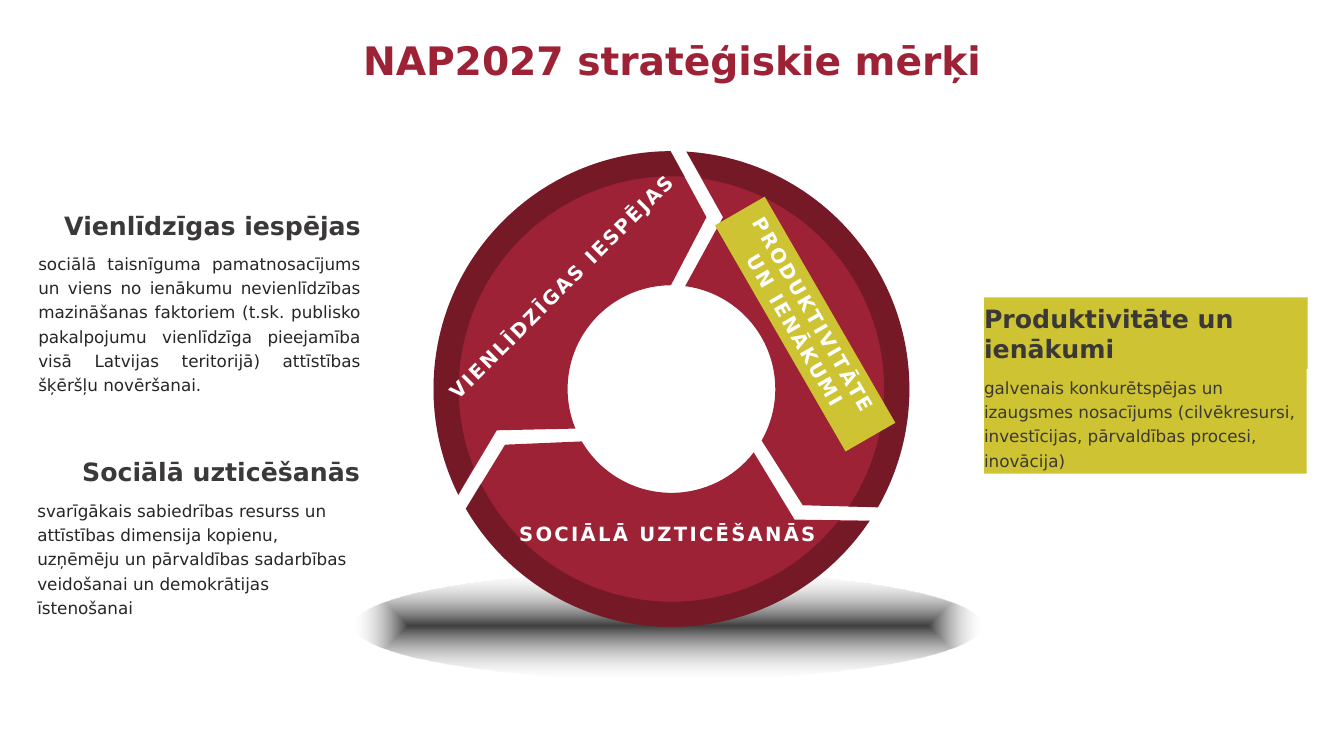
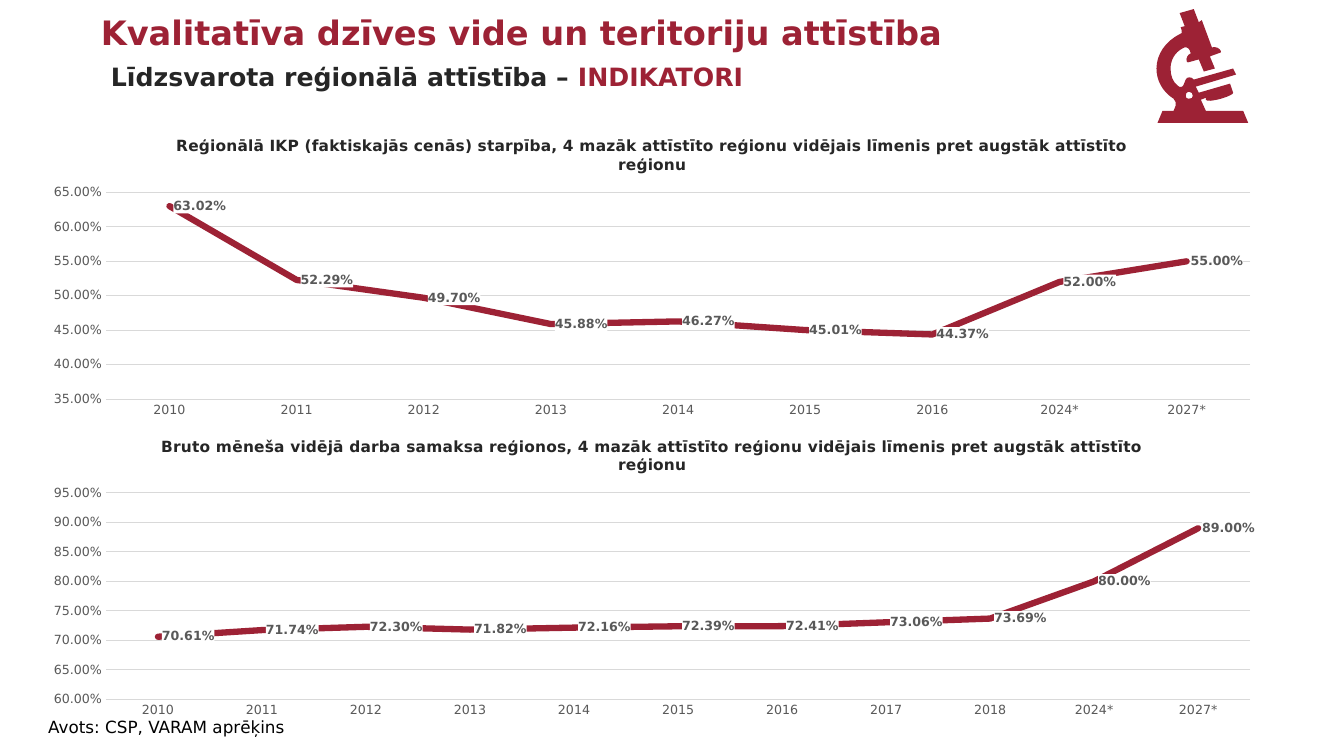
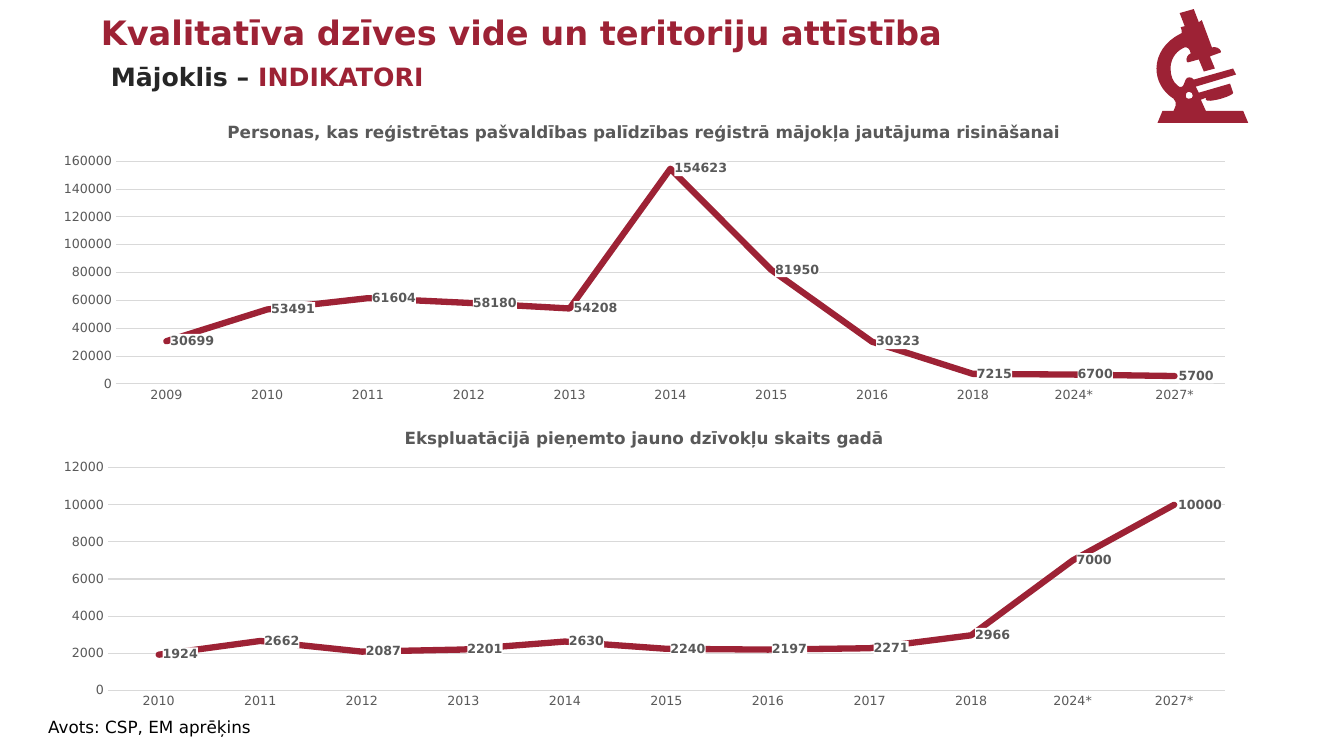
from math import ceil, cos, floor, radians, sin, tan

from lxml.etree import SubElement
from pptx import Presentation
from pptx.chart.data import CategoryChartData
from pptx.dml.color import RGBColor
from pptx.enum.chart import XL_CHART_TYPE as CT, XL_LABEL_POSITION as LP
from pptx.enum.chart import XL_MARKER_STYLE as MS, XL_TICK_MARK as TM
from pptx.enum.shapes import MSO_SHAPE as SHAPE
from pptx.enum.text import MSO_ANCHOR as ANCHOR, MSO_AUTO_SIZE as FIT, PP_ALIGN as AL
from pptx.oxml import parse_xml
from pptx.oxml.ns import nsdecls, qn
from pptx.util import Inches, Pt

FONT = "DejaVu Sans"
RED = RGBColor(0x9D, 0x22, 0x35)
LIME = RGBColor(0xCE, 0xC3, 0x32)
DARK = RGBColor(0x3B, 0x38, 0x38)
INK = RGBColor(0x26, 0x26, 0x26)
GREY = RGBColor(0x59, 0x59, 0x59)
GRID = RGBColor(0xD9, 0xD9, 0xD9)
WHITE = RGBColor(0xFF, 0xFF, 0xFF)
BLACK = RGBColor(0, 0, 0)

# ---- Content: goals slide
GOALS_TITLE = "NAP2027 stratēģiskie mērķi"
# heading, heading box, heading align, body, body box, body align, colour, fill
GOALS = [
    ("Produktivitāte un ienākumi", (9.76, 2.95, 3.21, 0.71), AL.LEFT,
     "galvenais konkurētspējas un izaugsmes nosacījums (cilvēkresursi, investīcijas, "
     "pārvaldības procesi, inovācija)", (9.76, 3.66, 3.2, 1.04), AL.LEFT, DARK, LIME),
    ("Sociālā uzticēšanās", (0.36, 4.48, 3.21, 0.4), AL.RIGHT,
     "svarīgākais sabiedrības resurss un attīstības dimensija kopienu, uzņēmēju un "
     "pārvaldības sadarbības veidošanai un demokrātijas īstenošanai",
     (0.37, 4.88, 3.2, 1.29), AL.LEFT, INK, None),
    ("Vienlīdzīgas iespējas", (0.37, 2.04, 3.21, 0.4), AL.RIGHT,
     "sociālā taisnīguma pamatnosacījums un viens no ienākumu nevienlīdzības mazināšanas "
     "faktoriem (t.sk. publisko pakalpojumu vienlīdzīga pieejamība visā Latvijas "
     "teritorijā) attīstības šķēršļu novēršanai.",
     (0.38, 2.43, 3.2, 1.53), AL.JUSTIFY, INK, None),
]
# lines, box, rotation, fill
RING_LABELS = [
    (["VIENLĪDZĪGAS IESPĒJAS"], (3.84, 2.68, 3.45, 0.34), 315, None),
    (["SOCIĀLĀ UZTICĒŠANĀS"], (5, 5.13, 3.24, 0.34), 0, None),
    (["PRODUKTIVITĀTE ", "UN IENĀKUMI"], (6.69, 2.93, 2.59, 0.57), 60, LIME),
]

# ---- Content: indicator slides
INDICATOR_TITLE = "Kvalitatīva dzīves vide un teritoriju attīstība"
TO_2018 = [str(y) for y in range(2010, 2019)] + ["2024*", "2027*"]
INDICATORS = [
    dict(topic="Līdzsvarota reģionālā attīstība", topic_width=6.68,
         source="Avots: CSP, VARAM aprēķins", source_width=2.86,
         title_size=11, title_color=INK, charts=[
        dict(title="Reģionālā IKP (faktiskajās cenās) starpība, 4 mazāk attīstīto reģionu "
                   "vidējais līmenis pret augstāk attīstīto reģionu",
             box=(0.29, 1.2, 12.36, 3), plot=(1.05, 1.91, 12.4, 3.96),
             cats=TO_2018[:7] + TO_2018[-2:], limits=(0.35, None), fmt="0.00%",
             vals=[0.6302, 0.5229, 0.497, 0.4588, 0.4627, 0.4501, 0.4437, 0.52, 0.55]),
        dict(title="Bruto mēneša vidējā darba samaksa reģionos, 4 mazāk attīstīto reģionu "
                   "vidējais līmenis pret augstāk attīstīto reģionu",
             box=(0.29, 4.18, 12.36, 3), plot=(1.05, 4.89, 12.4, 6.94),
             cats=TO_2018, limits=(0.6, None), fmt="0.00%",
             vals=[0.7061, 0.7174, 0.723, 0.7182, 0.7216, 0.7239, 0.7241, 0.7306,
                   0.7369, 0.8, 0.89])]),
    dict(topic="Mājoklis", topic_width=3.52,
         source="Avots: CSP, EM aprēķins", source_width=2.49,
         title_size=12, title_color=GREY, charts=[
        dict(title="Personas, kas reģistrētas pašvaldības palīdzības reģistrā mājokļa "
                   "jautājuma risināšanai",
             box=(0.39, 1.05, 12, 3), plot=(1.15, 1.6, 12.15, 3.81),
             cats=["2009"] + TO_2018[:7] + TO_2018[-3:], limits=(None, 160000),
             fmt="General",
             vals=[30699, 53491, 61604, 58180, 54208, 154623, 81950, 30323, 7215,
                   6700, 5700]),
        dict(title="Ekspluatācijā pieņemto jauno dzīvokļu skaits gadā",
             box=(0.39, 4.09, 12, 3), plot=(1.07, 4.64, 12.15, 6.85),
             cats=TO_2018, limits=(None, None), fmt="0",
             vals=[1924, 2662, 2087, 2201, 2630, 2240, 2197, 2271, 2966, 7000, 10000])]),
]

# Microscope outline: pairs are corners, sextuples are Bezier curves
MICROSCOPE = [
    [(11.84, .09), (11.7, .13), (11.75, .26), (11.71, .27), (11.72, .3),
     (11.73, .32, 11.72, .34, 11.7, .34), (11.56, .41, 11.47, .54, 11.47, .68),
     (11.47, .8, 11.53, .91, 11.64, .98), (11.66, 1, 11.67, 1.03, 11.66, 1.05),
     (11.64, 1.1), (11.53, 1.1), (11.48, 1.22), (12.38, 1.22), (12.33, 1.1), (11.96, 1.1),
     (11.91, .99), (11.96, .97), (11.96, .99), (11.97, 1.01, 12.03, 1, 12.11, .98),
     (12.18, .96, 12.24, .93, 12.23, .92), (12.2, .83), (11.89, .92), (11.86, .86),
     (12.26, .74), (12.23, .68), (11.84, .79), (11.82, .76, 11.77, .76, 11.76, .79),
     (11.74, .84), (11.73, .87, 11.7, .87, 11.68, .85),
     (11.63, .81, 11.61, .75, 11.61, .68), (11.61, .6, 11.65, .52, 11.73, .48),
     (11.75, .46, 11.79, .47, 11.8, .5), (11.81, .53),
     (11.78, .54, 11.76, .58, 11.77, .61), (11.78, .62), (11.89, .59), (11.94, .71),
     (12.05, .68), (12, .56), (12.11, .52), (12.11, .51),
     (12.1, .48, 12.06, .46, 12.02, .47), (11.92, .2), (11.89, .22)],
    [(11.79, .91), (11.82, .91, 11.83, .93, 11.83, .95), (11.83, .97, 11.82, .98, 11.79, .98),
     (11.77, .98, 11.76, .97, 11.76, .95), (11.76, .93, 11.77, .91, 11.79, .91)],
]


# ---- Shared helpers
def inches(values):
    return [Inches(v) for v in values]


def set_font(font, size, color, bold=False):
    font.name, font.size, font.bold = FONT, Pt(size), bold
    font.color.rgb = color


def add_run(p, text, size, color, bold=False, spacing=None, highlight=None):
    r = p.add_run()
    r.text = text
    set_font(r.font, size, color, bold)
    rPr = r._r.get_or_add_rPr()
    if spacing:
        rPr.set("spc", str(spacing))
    if highlight is not None:
        rPr.find(qn("a:solidFill")).addnext(parse_xml(
            f'<a:highlight {nsdecls("a")}><a:srgbClr val="{highlight}"/></a:highlight>'))


def paint(sp, color):
    sp.shadow.inherit = False
    sp.fill.solid()
    sp.fill.fore_color.rgb = color
    sp.line.fill.background()


def add_box(s, box, fill=None, side=0.1, anchor=ANCHOR.TOP, wrap=True):
    if fill is None:
        sp = s.shapes.add_textbox(*inches(box))
    else:
        sp = s.shapes.add_shape(SHAPE.RECTANGLE, *inches(box))
        paint(sp, fill)
    tf = sp.text_frame
    tf.word_wrap, tf.auto_size, tf.vertical_anchor = wrap, FIT.SHAPE_TO_FIT_TEXT, anchor
    tf.margin_left = tf.margin_right = Inches(side)
    tf.paragraphs[0].alignment = AL.LEFT
    return sp


def add_slide(prs, title, box, size, align, side=0.1, wrap=True):
    s = prs.slides.add_slide(prs.slide_layouts[5])
    sp = s.shapes.title
    sp.left, sp.top, sp.width, sp.height = inches(box)
    tf = sp.text_frame
    tf.word_wrap, tf.auto_size, tf.vertical_anchor = wrap, FIT.NONE, ANCHOR.TOP
    tf.margin_left = tf.margin_right = Inches(side)
    p = tf.paragraphs[0]
    p.alignment = align
    add_run(p, title, size, RED, True)
    return s


def add_outline(s, contours, color):
    fb, segments = None, []
    for start, *rest in contours:
        if fb is None:
            fb = s.shapes.build_freeform(*inches(start), scale=1.0)
        else:
            fb.move_to(*inches(start))
        points = [inches(seg[i:i + 2]) for seg in rest for i in range(0, len(seg), 2)]
        fb.add_line_segments(points, close=True)
        segments += rest
    sp = fb.convert_to_shape()
    paint(sp, color)
    # Merge the three points of each curve into one Bezier segment
    lines = iter(list(sp._element.iter(qn("a:lnTo"))))
    for seg in segments:
        parts = [next(lines) for _ in range(len(seg) // 2)]
        if len(parts) == 3:
            curve = parse_xml(f'<a:cubicBezTo {nsdecls("a")}/>')
            parts[0].addprevious(curve)
            for part in parts:
                curve.append(part[0])
                part.getparent().remove(part)
    return sp


# ---- Ring of three arrows
CENTRE = (6.66, 3.86)
R_OUT, R_BAND, R_IN = 2.36, 2.11, 1.03


def polar(radius, angle):
    a = radians(angle)
    return CENTRE[0] + radius * cos(a), CENTRE[1] + radius * sin(a)


def arc(radius, start, end):
    """Start point, then one Bezier per quadrant crossed."""
    low, high = sorted((start, end))
    stops = [90 * k for k in range(floor(low / 90) + 1, ceil(high / 90))]
    angles = sorted([low, *stops, high], reverse=start > end)
    path = [polar(radius, start)]
    for a, b in zip(angles, angles[1:]):
        k = 4 / 3 * tan(radians(b - a) / 4)
        (x0, y0), (x3, y3) = polar(radius, a), polar(radius, b)
        (cx, cy) = CENTRE
        path.append((x0 - k * (y0 - cy), y0 + k * (x0 - cx),
                     x3 + k * (y3 - cy), y3 - k * (x3 - cx), x3, y3))
    return path


def add_ring(s):
    turns = (0, 120, 240)
    for t in turns:
        add_outline(s, [arc(R_OUT, 153.6 + t, 269.8 + t) + [polar(1.74, 281.5 + t)]
                        + arc(R_IN, 269.7 + t, 157.6 + t) + [polar(1.78, 166.7 + t)]], RED)
    for t in turns:
        band = add_outline(s, [arc(R_OUT, 153.6 + t, 269.8 + t)
                               + arc(R_BAND, 273.7 + t, 158.5 + t)], BLACK)
        clr = band._element.spPr.find(qn("a:solidFill"))[0]
        SubElement(clr, qn("a:alpha")).set("val", "25000")


def add_floor_shadow(s):
    sp = s.shapes.add_shape(SHAPE.OVAL, *inches((3.52, 5.67, 6.21, 1.07)))
    paint(sp, BLACK)
    spPr = sp._element.spPr
    spPr.replace(spPr.find(qn("a:solidFill")), parse_xml(
        f'<a:gradFill {nsdecls("a")} rotWithShape="1"><a:gsLst>'
        '<a:gs pos="0"><a:srgbClr val="404040"/></a:gs>'
        '<a:gs pos="100000"><a:srgbClr val="E7E6E6"><a:alpha val="0"/></a:srgbClr></a:gs>'
        '</a:gsLst><a:path path="shape">'
        '<a:fillToRect l="50000" t="50000" r="50000" b="50000"/></a:path></a:gradFill>'))


def goals_slide(prs):
    s = add_slide(prs, GOALS_TITLE, (0, 0.36, 13.33, 0.81), 28, AL.CENTER)
    s.shapes.title.text_frame.paragraphs[0].line_spacing = 0.9
    add_floor_shadow(s)
    add_ring(s)
    for head, head_box, head_al, body, body_box, body_al, color, fill in GOALS:
        p = add_box(s, head_box, fill, 0, ANCHOR.BOTTOM).text_frame.paragraphs[0]
        p.alignment = head_al
        add_run(p, head, 18, DARK, True, highlight=fill)
        p = add_box(s, body_box, fill, 0).text_frame.paragraphs[0]
        p.alignment, p.line_spacing = body_al, 1.2
        add_run(p, body, 12, color, highlight=fill)
    for lines, box, rotation, fill in RING_LABELS:
        sp = add_box(s, box, fill, wrap=False)
        sp.rotation = rotation
        tf = sp.text_frame
        for i, line in enumerate(lines):
            p = tf.add_paragraph() if i else tf.paragraphs[0]
            p.alignment = AL.CENTER
            add_run(p, line, 14, WHITE, True, 160, fill)


# ---- Line charts
def place_plot(chart, box, plot):
    x, y, w, h = box
    left, top, right, bottom = plot
    parts = dict(x=(left - x) / w, y=(top - y) / h, w=(right - left) / w, h=(bottom - top) / h)
    area = chart._chartSpace.chart.plotArea
    for old in area.findall(qn("c:layout")):
        area.remove(old)
    modes = "".join(f'<c:{k}Mode val="edge"/>' for k in "xy")
    sizes = "".join(f'<c:{k} val="{v:.4f}"/>' for k, v in parts.items())
    area.insert(0, parse_xml(
        f'<c:layout {nsdecls("c")}><c:manualLayout><c:layoutTarget val="inner"/>'
        f'{modes}{sizes}</c:manualLayout></c:layout>'))


def add_line_chart(s, spec, title_size, title_color):
    data = CategoryChartData(number_format=spec["fmt"])
    data.categories = spec["cats"]
    data.add_series("Series 1", spec["vals"])
    chart = s.shapes.add_chart(CT.LINE, *inches(spec["box"]), data).chart
    set_font(chart.font, 9, GREY)
    chart.has_legend = False
    chart.has_title = True
    add_run(chart.chart_title.text_frame.paragraphs[0], spec["title"],
            title_size, title_color, True)
    chart.chart_title.include_in_layout = False
    place_plot(chart, spec["box"], spec["plot"])

    # Axes
    cat, val = chart.category_axis, chart.value_axis
    for axis in (cat, val):
        axis.major_tick_mark = axis.minor_tick_mark = TM.NONE
        set_font(axis.tick_labels.font, 9, GREY)
    val.minimum_scale, val.maximum_scale = spec["limits"]
    val.tick_labels.number_format = spec["fmt"]
    val.tick_labels.number_format_is_linked = False
    val.format.line.fill.background()
    for line in (cat.format.line, val.major_gridlines.format.line):
        line.color.rgb, line.width = GRID, Pt(0.75)

    # Series and value labels
    plot = chart.plots[0]
    plot.vary_by_categories = False
    ser = plot.series[0]
    ser.smooth = False
    ser.marker.style = MS.NONE
    ser.format.line.color.rgb, ser.format.line.width = RED, Pt(4.5)
    ser.format.line._get_or_add_ln().set("cap", "rnd")
    labels = ser.data_labels
    labels.show_value, labels.position = True, LP.RIGHT
    labels.number_format, labels.number_format_is_linked = spec["fmt"], False
    set_font(labels.font, 9, GREY, True)
    labels._element.find(qn("c:numFmt")).addnext(parse_xml(
        f'<c:spPr {nsdecls("c", "a")}><a:solidFill><a:srgbClr val="FFFFFF"/>'
        '</a:solidFill></c:spPr>'))


def indicator_slide(prs, spec):
    s = add_slide(prs, INDICATOR_TITLE, (0.95, 0.07, 8.45, 0.5), 24, AL.LEFT, 0.05, False)
    topic = add_box(s, (1.05, 0.56, spec["topic_width"], 0.4), side=0.05, wrap=False)
    p = topic.text_frame.paragraphs[0]
    add_run(p, spec["topic"] + " – ", 18, INK, True)
    add_run(p, "INDIKATORI", 18, RED, True)
    add_outline(s, MICROSCOPE, RED)
    for chart in spec["charts"]:
        add_line_chart(s, chart, spec["title_size"], spec["title_color"])
    source = add_box(s, (0.38, 7.06, spec["source_width"], 0.3))
    add_run(source.text_frame.paragraphs[0], spec["source"], 12, BLACK)


def main():
    prs = Presentation()
    prs.slide_width, prs.slide_height = Inches(13.33), Inches(7.5)
    goals_slide(prs)
    for spec in INDICATORS:
        indicator_slide(prs, spec)
    prs.save("out.pptx")


if __name__ == "__main__":
    main()
